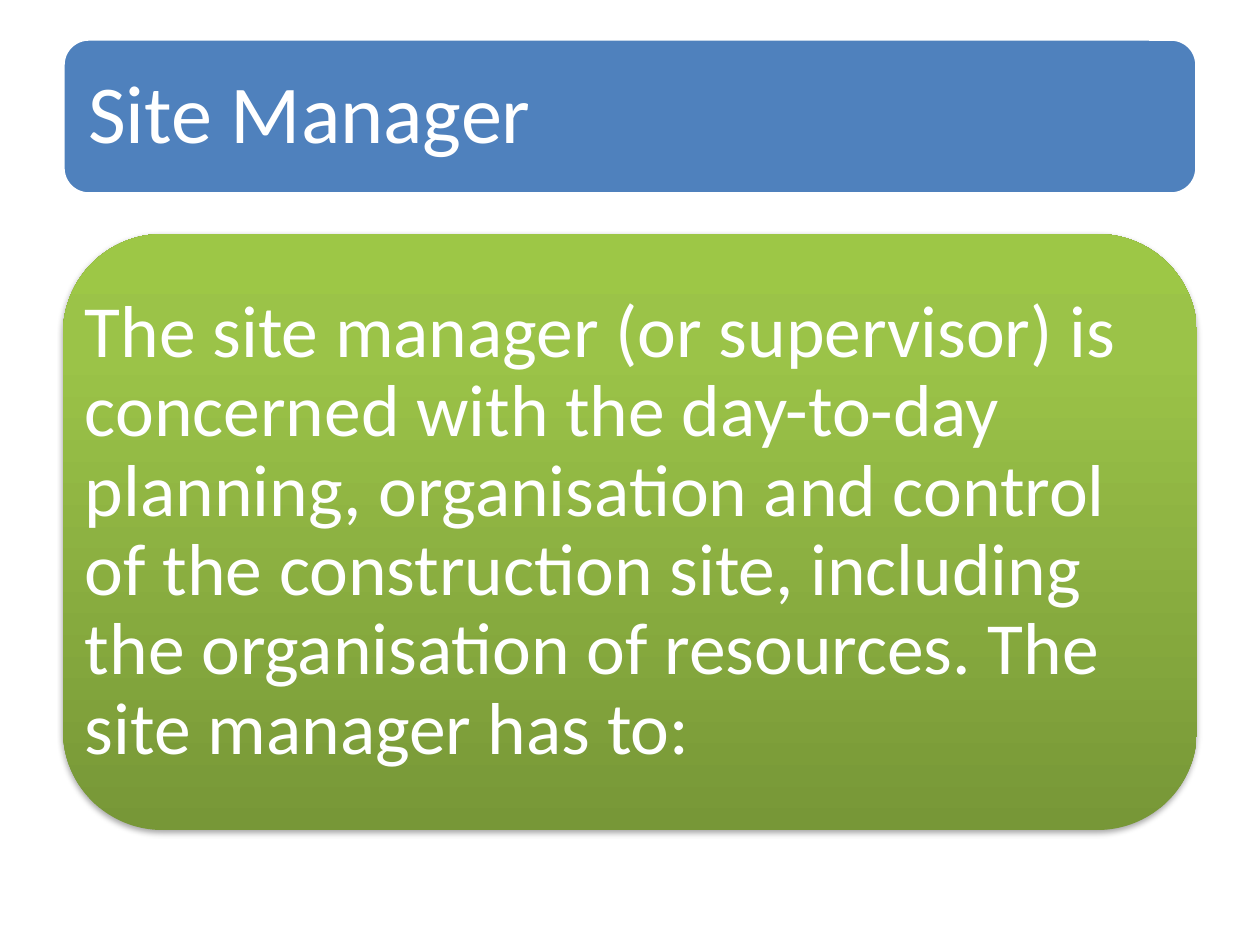
"""Build the Site Manager slide: a heading banner above a description panel."""
from copy import deepcopy
from dataclasses import dataclass

from lxml.etree import SubElement
from pptx import Presentation
from pptx.dml.color import RGBColor
from pptx.enum.shapes import MSO_SHAPE
from pptx.enum.text import MSO_ANCHOR, MSO_AUTO_SIZE, PP_ALIGN
from pptx.oxml.ns import qn
from pptx.util import Emu, Pt

PX_PER_INCH = 126


@dataclass(frozen=True)
class Theme:
    font: str = "Calibri"
    white: str = "FFFFFF"
    banner: str = "4F81BD"
    shadow: str = "000000"
    gradient: tuple = ((0, "779737"), (0.8, "9BC348"), (1, "9DC746"))
    title_size: int = 47
    body_size: int = 42


@dataclass(frozen=True)
class Block:
    top: int
    height: int
    inset: int
    size: int
    wording: str
    left: int = 63
    width: int = 1134

    def bounds(self) -> list:
        return [px(n) for n in (self.left, self.top, self.width, self.height)]


THEME = Theme()
HEADING = Block(39, 155, 25, THEME.title_size, "Site Manager")
DESCRIPTION = Block(
    234, 596, 22, THEME.body_size,
    "The site manager (or supervisor) is concerned with the day-to-day planning, "
    "organisation and control of the construction site, including the organisation "
    "of resources. The site manager has to:",
)


def px(length: int) -> Emu:
    return Emu(length * 914400 // PX_PER_INCH)


def rgb(value: str) -> RGBColor:
    return RGBColor.from_string(value)


def add_panel(slide, block: Block, placeholder):
    panel = slide.shapes.add_shape(MSO_SHAPE.ROUNDED_RECTANGLE, *block.bounds())
    panel.shadow.inherit = False
    placeholder._element.addprevious(panel._element)
    return panel


def fill_gradient(panel) -> None:
    panel.fill.gradient()
    panel.fill.gradient_angle = 90
    stop_list = panel._element.spPr.find(".//" + qn("a:gsLst"))
    stop_list.append(deepcopy(stop_list[0]))
    for stop, (position, color) in zip(panel.fill.gradient_stops, THEME.gradient):
        stop.position = position
        stop.color.rgb = rgb(color)


def cast_shadow(panel) -> None:
    effects = panel._element.spPr.find(qn("a:effectLst"))
    shadow = SubElement(effects, qn("a:outerShdw"), blurRad="40000", dist="23000",
                        dir="5400000", rotWithShape="0")
    color = SubElement(shadow, qn("a:srgbClr"), val=THEME.shadow)
    SubElement(color, qn("a:alpha"), val="35000")


def write(placeholder, block: Block) -> None:
    placeholder.left, placeholder.top, placeholder.width, placeholder.height = block.bounds()
    frame = placeholder.text_frame
    frame.text = block.wording
    frame.word_wrap = True
    frame.auto_size = MSO_AUTO_SIZE.NONE
    frame.vertical_anchor = MSO_ANCHOR.MIDDLE
    frame.margin_left = frame.margin_right = px(block.inset)
    frame.margin_top = frame.margin_bottom = px(block.inset)
    paragraph = frame.paragraphs[0]
    paragraph.alignment = PP_ALIGN.LEFT
    paragraph.line_spacing = 0.9
    paragraph.space_before = Pt(0)
    properties = paragraph._p.get_or_add_pPr()
    properties.set("marL", "0")
    properties.set("indent", "0")
    SubElement(properties, qn("a:buNone"))
    font = paragraph.runs[0].font
    font.name = THEME.font
    font.size = Pt(block.size)
    font.color.rgb = rgb(THEME.white)


def main() -> None:
    deck = Presentation()
    deck.slide_width, deck.slide_height = px(1260), px(945)
    slide = deck.slides.add_slide(deck.slide_layouts[1])
    title, body = slide.placeholders

    banner = add_panel(slide, HEADING, title)
    banner.fill.solid()
    banner.fill.fore_color.rgb = rgb(THEME.banner)
    banner.line.color.rgb = rgb(THEME.white)
    banner.line.width = Pt(2)
    write(title, HEADING)

    panel = add_panel(slide, DESCRIPTION, body)
    fill_gradient(panel)
    panel.line.fill.background()
    cast_shadow(panel)
    write(body, DESCRIPTION)

    deck.save("out.pptx")


if __name__ == "__main__":
    main()
